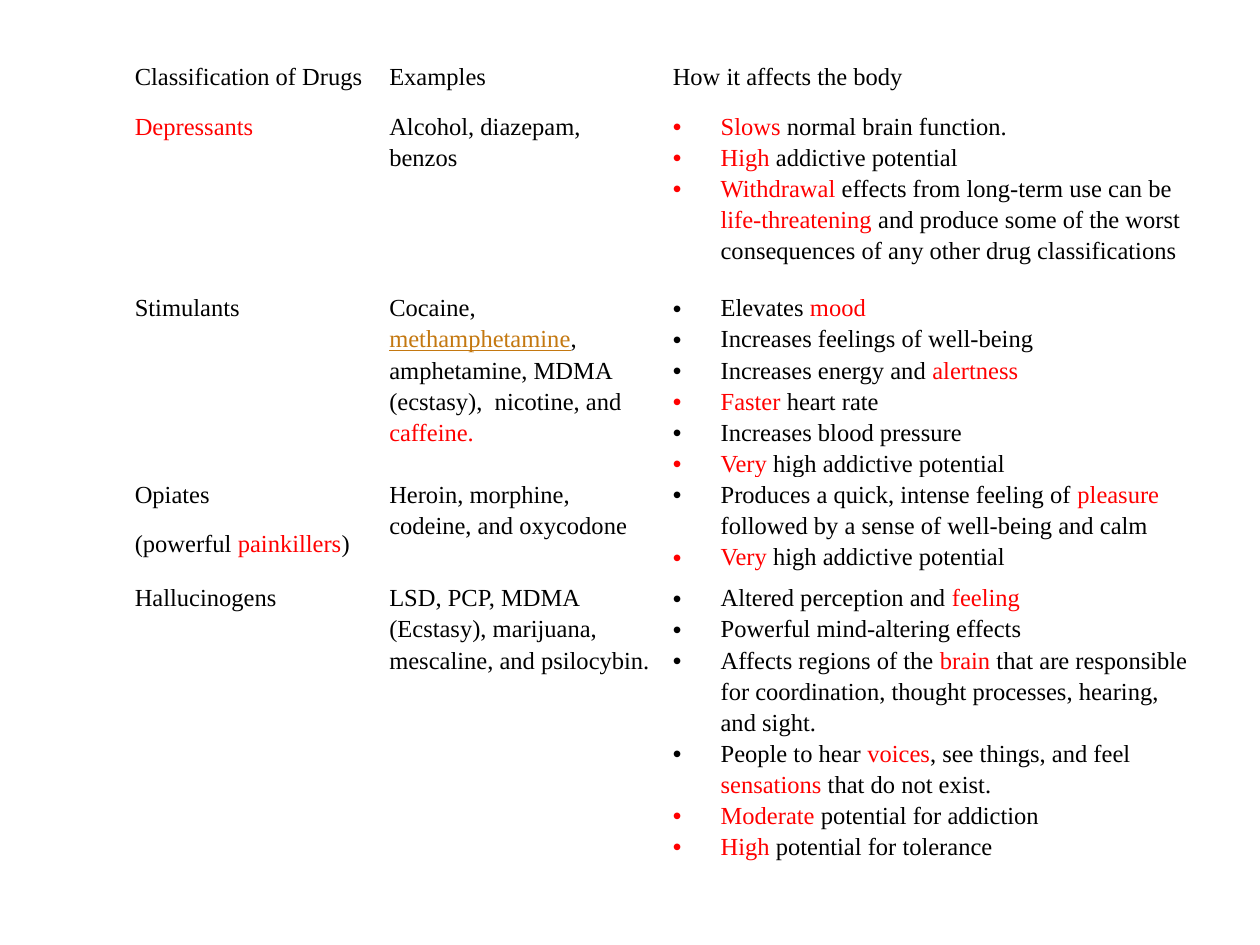
from dataclasses import dataclass

from lxml import etree
from pptx import Presentation
from pptx import util as u
from pptx.dml.color import RGBColor
from pptx.oxml import ns


@dataclass(frozen=True)
class Theme:
    font: str = "Times New Roman"
    size: int = 14
    ink: str = "000000"
    accent: str = "FF0000"
    link: str = "C47810"
    paper: str = "FFFFFF"


THEME = Theme()
COLUMN_WIDTHS = [2.02, 2.25, 4.28]
ROW_HEIGHTS = [0.4, 1.44, 1.24, 0.82, 2.27]
BULLET_INDENT = 0.38

# Text between * marks is red; text between _ marks looks like a link.
HEADER = ["Classification of Drugs", "Examples", "How it affects the body"]
# Each row: names, examples, effects (one paragraph per item).
DRUGS = [
    (["*Depressants*"],
     ["Alcohol, diazepam, benzos"],
     ["*Slows* normal brain function.",
      "*High* addictive potential",
      "*Withdrawal* effects from long-term use can be *life-threatening *and "
      "produce some of the worst consequences of any other drug classifications"]),
    (["Stimulants"],
     ["Cocaine, _methamphetamine_, amphetamine, MDMA (ecstasy),  nicotine, and "
      "*caffeine.*"],
     ["Elevates* mood*",
      "Increases feelings of well-being",
      "Increases energy and *alertness*",
      "*Faster* heart rate",
      "Increases blood pressure",
      "*Very *high addictive potential"]),
    (["Opiates", "(powerful *painkillers*)"],
     ["Heroin, morphine, codeine, and oxycodone"],
     ["Produces a quick, intense feeling of *pleasure *followed by a sense of "
      "well-being and calm",
      "*Very* high addictive potential"]),
    (["Hallucinogens"],
     ["LSD, PCP, MDMA (Ecstasy), marijuana, mescaline, and psilocybin."],
     ["Altered perception and *feeling*",
      "Powerful mind-altering effects",
      "Affects regions of the *brain* that are responsible for coordination, "
      "thought processes, hearing, and sight.",
      "People to hear *voices*, see things, and feel *sensations* that do not exist.",
      "*Moderate* potential for addiction",
      "*High* potential for tolerance"]),
]


def set_format(target, values):
    for name, value in values.items():
        setattr(target, name, value)


def split_spans(marked):
    """Yield (text, colour, underline) for each part of the marked text."""
    for i, part in enumerate(marked.split("*")):
        for j, piece in enumerate(part.split("_")):
            if piece:
                colour = THEME.link if j % 2 else THEME.accent if i % 2 else THEME.ink
                yield piece, colour, bool(j % 2)


def add_bullet(para, colour):
    props = para._p.get_or_add_pPr()
    indent = u.Inches(BULLET_INDENT)
    props.set("marL", str(indent))
    props.set("indent", str(-indent))
    tint = etree.SubElement(props, ns.qn("a:buClr"))
    etree.SubElement(tint, ns.qn("a:srgbClr")).set("val", colour)
    etree.SubElement(props, ns.qn("a:buFont")).set("typeface", "Arial")
    etree.SubElement(props, ns.qn("a:buChar")).set("char", "•")


def write_para(para, marked, bulleted):
    spans = list(split_spans(marked))
    if bulleted:
        add_bullet(para, spans[0][1])
    set_format(para, {"line_spacing": 1.15,
                      "space_before": u.Pt(0),
                      "space_after": u.Pt(0 if bulleted else 10)})
    for words, colour, underline in spans:
        span = para.add_run()
        span.text = words
        set_format(span.font, {"name": THEME.font, "size": u.Pt(THEME.size),
                               "bold": False, "underline": underline})
        span.font.color.rgb = RGBColor.from_string(colour)


def fill_cell(cell, lines, bulleted=False):
    side = u.Inches(0.07)
    set_format(cell, {"margin_left": side, "margin_right": side,
                      "margin_top": 0, "margin_bottom": 0})
    cell.fill.solid()
    cell.fill.fore_color.rgb = RGBColor.from_string(THEME.paper)
    box = cell.text_frame
    for i, line in enumerate(lines):
        para = box.add_paragraph() if i else box.paragraphs[0]
        write_para(para, line, bulleted)


def add_drug_table(page):
    frame = page.shapes.add_table(
        len(ROW_HEIGHTS), len(COLUMN_WIDTHS), u.Inches(1), u.Inches(0.47),
        u.Inches(sum(COLUMN_WIDTHS)), u.Inches(sum(ROW_HEIGHTS)))
    table = frame.table
    set_format(table, {"first_row": False, "horz_banding": False})
    for column, width in zip(table.columns, COLUMN_WIDTHS):
        column.width = u.Inches(width)
    for row, height in zip(table.rows, ROW_HEIGHTS):
        row.height = u.Inches(height)

    # Header row, then one row per drug class
    for c, label in enumerate(HEADER):
        fill_cell(table.cell(0, c), [label])
    for r, drug in enumerate(DRUGS, start=1):
        for c, lines in enumerate(drug):
            fill_cell(table.cell(r, c), lines, bulleted=c == 2)


def main():
    deck = Presentation()
    set_format(deck, {"slide_width": u.Inches(10), "slide_height": u.Inches(7.5)})
    # The slide has no title, so it uses the blank layout
    page = deck.slides.add_slide(deck.slide_layouts[6])
    add_drug_table(page)
    deck.save("out.pptx")


if __name__ == "__main__":
    main()
